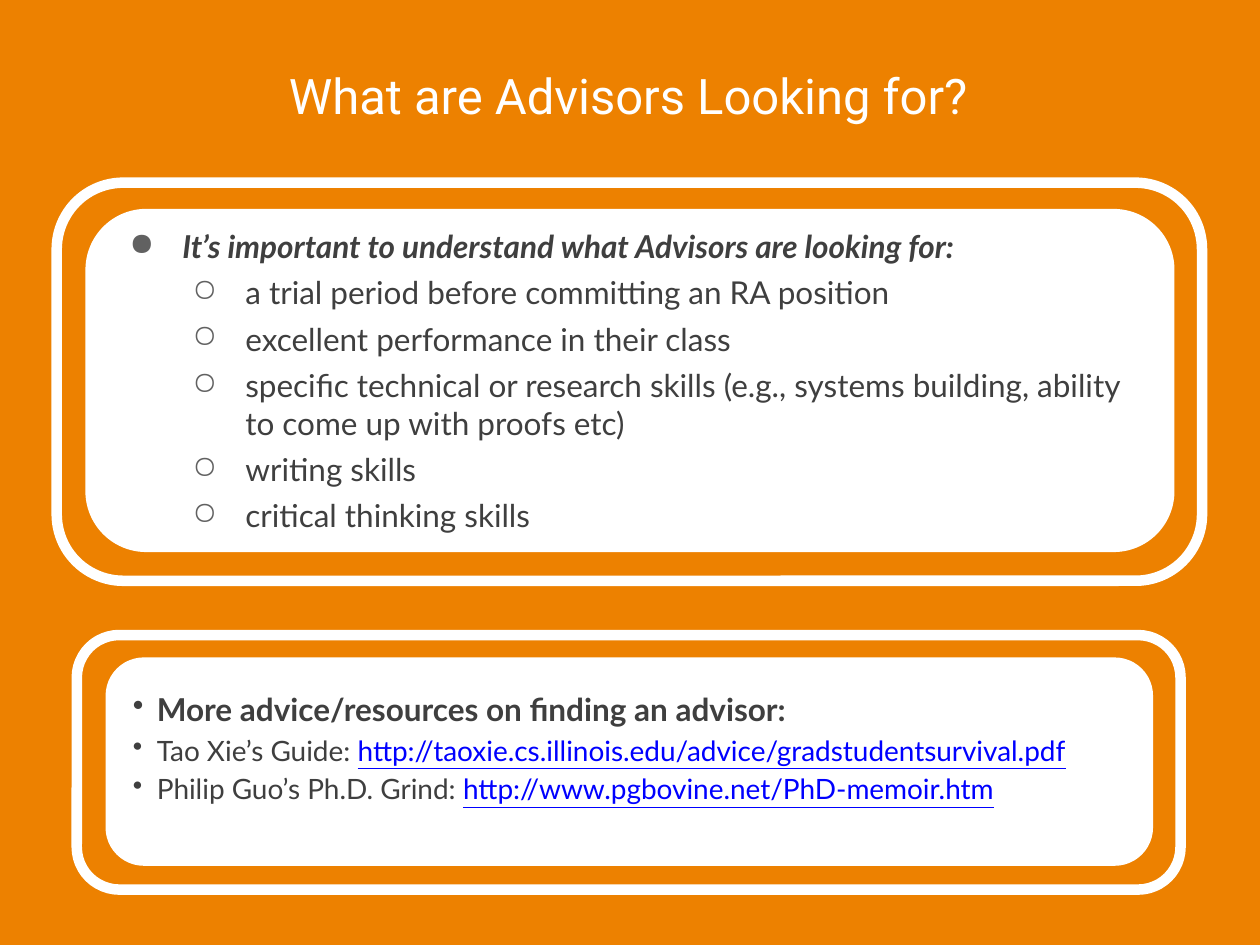
from dataclasses import dataclass
from lxml.etree import SubElement
from pptx import Presentation
from pptx.dml.color import RGBColor
from pptx.enum.shapes import MSO_SHAPE
from pptx.enum.text import MSO_ANCHOR, PP_ALIGN
from pptx.oxml.ns import qn
from pptx.util import Inches, Pt


@dataclass(frozen=True)
class Theme:
    background: str = "ED8100"
    white: str = "FFFFFF"
    text: str = "3F3F3F"
    marker: str = "616161"
    link: str = "0000FF"
    title_font: str = "Roboto"
    body_font: str = "Lato"
    title_size: int = 28
    body_size: int = 18
    resource_size: int = 16
    border: int = 6
    corner: float = 0.167


THEME = Theme()
TITLE = "What are Advisors Looking for?"
EXPECTATIONS_HEADING = "It’s important to understand what Advisors are looking for:"
EXPECTATIONS = [
    "a trial period before committing an RA position",
    "excellent performance in their class",
    "specific technical or research skills (e.g., systems building, ability to come up with proofs etc)",
    "writing skills",
    "critical thinking skills",
]
RESOURCES_HEADING = "More advice/resources on finding an advisor:"
RESOURCES = [
    ("Tao Xie’s Guide: ", "http://taoxie.cs.illinois.edu/advice/gradstudentsurvival.pdf"),
    ("Philip Guo’s Ph.D. Grind: ", "http://www.pgbovine.net/PhD-memoir.htm"),
]
TITLE_AREA = (0.08, 0.24, 9.81, 1.03)
EXPECTATIONS_FRAME = (0.45, 1.45, 9.09, 3.16)
EXPECTATIONS_PANEL = (0.72, 1.7, 8.56, 2.64)
RESOURCES_FRAME = (0.61, 5.04, 8.76, 2.02)
RESOURCES_PANEL = (0.88, 5.26, 8.23, 1.57)


def color(value):
    return RGBColor.from_string(value)


def add_panel(page, area, filled):
    panel = page.shapes.add_shape(MSO_SHAPE.ROUNDED_RECTANGLE, *map(Inches, area))
    panel.adjustments[0] = THEME.corner
    panel.shadow.inherit = False
    panel.line.color.rgb = color(THEME.white)
    panel.line.width = Pt(THEME.border)
    if filled:
        panel.fill.solid()
        panel.fill.fore_color.rgb = color(THEME.white)
    else:
        panel.fill.background()
    return panel


def set_insets(frame, horizontal, vertical):
    frame.margin_left = frame.margin_right = Inches(horizontal)
    frame.margin_top = frame.margin_bottom = Inches(vertical)


def style_span(span, font, size, shade, bold=False, italic=False, underline=False):
    span.font.name = font
    span.font.size = Pt(size)
    span.font.color.rgb = color(shade)
    span.font.bold = bold
    span.font.italic = italic
    span.font.underline = underline


def add_item(frame, texts, marker, marker_color, indent, hanging, space,
             size=THEME.body_size, level=0, bold=False, italic=False):
    first = not frame.paragraphs[0].runs
    para = frame.paragraphs[0] if first else frame.add_paragraph()
    para.alignment = PP_ALIGN.LEFT
    para.level = level
    if not first:
        para.space_before = Pt(space)
    properties = para._p.get_or_add_pPr()
    properties.set("marL", str(Inches(indent)))
    properties.set("indent", str(-Inches(hanging)))
    bullet_color = SubElement(properties, qn("a:buClr"))
    SubElement(bullet_color, qn("a:srgbClr"), val=marker_color)
    SubElement(properties, qn("a:buChar"), char=marker)
    for position, text in enumerate(texts):
        is_link = position > 0
        span = para.add_run()
        span.text = text
        style_span(span, THEME.body_font, size, THEME.link if is_link else THEME.text,
                   bold, italic, is_link)


def add_title(page):
    title = page.shapes.title
    title.left, title.top, title.width, title.height = map(Inches, TITLE_AREA)
    frame = title.text_frame
    frame.text = TITLE
    frame.word_wrap = True
    frame.vertical_anchor = MSO_ANCHOR.MIDDLE
    set_insets(frame, 0.1, 0.1)
    para = frame.paragraphs[0]
    para.alignment = PP_ALIGN.CENTER
    style_span(para.runs[0], THEME.title_font, THEME.title_size, THEME.white)


def add_expectations(page):
    add_panel(page, EXPECTATIONS_FRAME, filled=False)
    frame = add_panel(page, EXPECTATIONS_PANEL, filled=True).text_frame
    frame.word_wrap = True
    frame.vertical_anchor = MSO_ANCHOR.MIDDLE
    set_insets(frame, 0.1, 0.05)
    add_item(frame, [EXPECTATIONS_HEADING], "●", THEME.marker, 0.5, 0.42, 4.8,
             bold=True, italic=True)
    for text in EXPECTATIONS:
        add_item(frame, [text], "○", THEME.marker, 1, 0.42, 4.8, level=1)


def add_resources(page):
    frame = add_panel(page, RESOURCES_PANEL, filled=True).text_frame
    add_panel(page, RESOURCES_FRAME, filled=False)
    frame.word_wrap = True
    frame.vertical_anchor = MSO_ANCHOR.TOP
    set_insets(frame, 0.1, 0.14)
    add_item(frame, [RESOURCES_HEADING], "•", THEME.text, 0.19, 0.19, 3, bold=True)
    for resource in RESOURCES:
        add_item(frame, resource, "•", THEME.text, 0.19, 0.19, 3, THEME.resource_size)


def main():
    deck = Presentation()
    deck.slide_width, deck.slide_height = Inches(10), Inches(7.5)
    page = deck.slides.add_slide(deck.slide_layouts.get_by_name("Title Only"))
    page.background.fill.solid()
    page.background.fill.fore_color.rgb = color(THEME.background)
    add_title(page)
    add_expectations(page)
    add_resources(page)
    deck.save("out.pptx")


if __name__ == "__main__":
    main()
